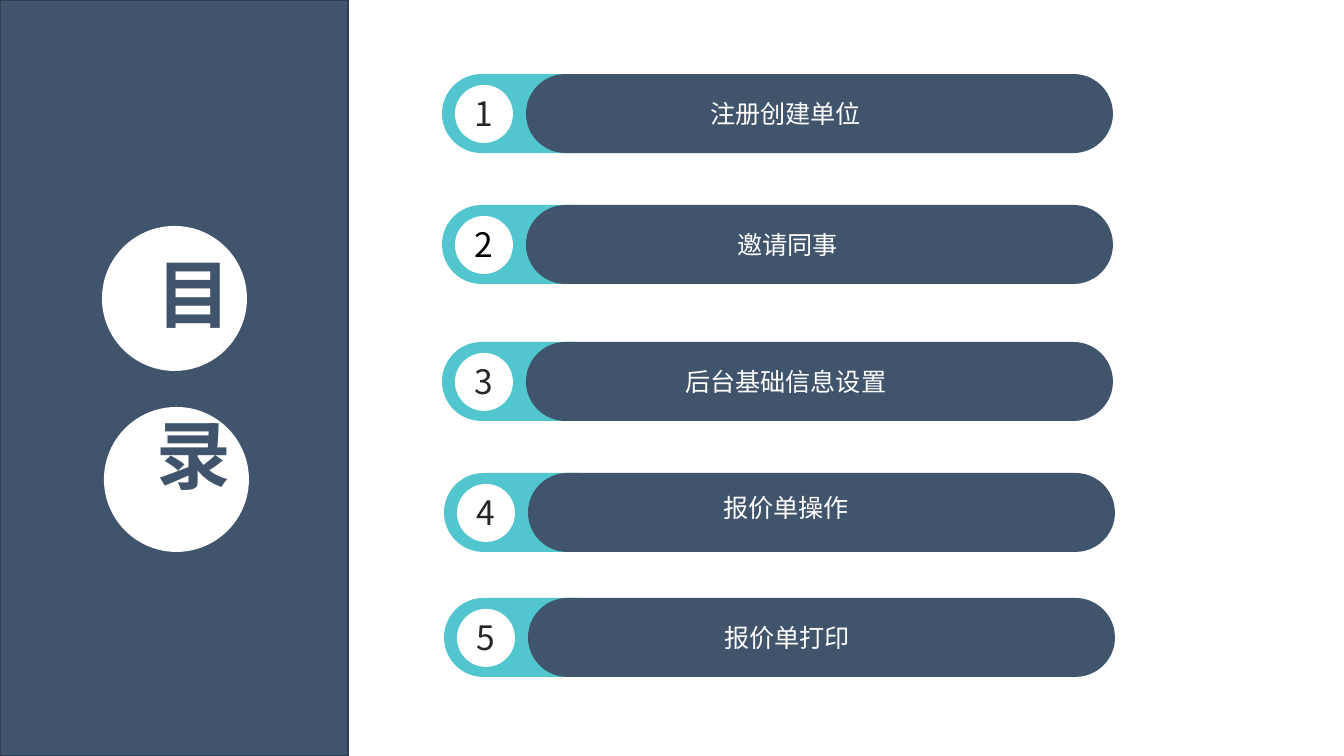
import pptx
import pptx.dml.color
import pptx.enum.shapes
import pptx.enum.text
import pptx.util
from lxml import etree

PX = 914400 / 134.4
FONT = "Noto Sans CJK SC"
NAVY, TEAL, WHITE = "40546C", "51C6CF", "FFFFFF"
RECT = pptx.enum.shapes.MSO_SHAPE.RECTANGLE
PILL = pptx.enum.shapes.MSO_SHAPE.ROUNDED_RECTANGLE
OVAL = pptx.enum.shapes.MSO_SHAPE.OVAL


def add_filled(shapes, kind, box, color):
    shape = shapes.add_shape(kind, *[round(v * PX) for v in box])
    shape.shadow.inherit = False
    shape.fill.solid()
    shape.fill.fore_color.rgb = pptx.dml.color.RGBColor.from_string(color)
    shape.line.fill.background()
    if kind == PILL:
        shape.adjustments[0] = 0.5
    return shape


def add_text(shapes, box, text, size, color, bold=False, wrap=True):
    frame = shapes.add_textbox(*[round(v * PX) for v in box]).text_frame
    frame.word_wrap = wrap
    frame.vertical_anchor = pptx.enum.text.MSO_ANCHOR.MIDDLE
    frame.text = text
    for paragraph in frame.paragraphs:
        paragraph.alignment = pptx.enum.text.PP_ALIGN.CENTER
        font = paragraph.runs[0].font
        font.name = FONT
        font.size = pptx.util.Pt(size)
        font.bold = bold
        font.color.rgb = pptx.dml.color.RGBColor.from_string(color)
        east_asian = etree.SubElement(font._element, pptx.oxml.ns.qn("a:ea"))
        east_asian.set("typeface", FONT)
    return frame


deck = pptx.Presentation()
deck.slide_width = round(1344 * PX)
deck.slide_height = round(756 * PX)
slide = deck.slides.add_slide(deck.slide_layouts[6])

# Side panel with the heading
panel = add_filled(slide.shapes, RECT, (0, 0, 348, 756), NAVY)
panel.line.color.rgb = pptx.dml.color.RGBColor.from_string("2F3E50")
panel.line.width = pptx.util.Pt(1)
for left, top in [(102, 226), (104, 407)]:
    add_filled(slide.shapes, OVAL, (left, top, 145, 145), WHITE)
heading = add_text(slide.shapes, (135, 239, 118, 268), "目\n录", 40, NAVY, bold=True)
heading.margin_top = heading.margin_bottom = 0
heading.paragraphs[1].space_before = pptx.util.Pt(38)

# Agenda entries: left, top, label left, label offset from top, number colour, label
entries = [
    (442, 74, 551, 17, "262626", "注册创建单位"),
    (442, 205, 553, 17, "000000", "邀请同事"),
    (442, 342, 551, 17, "262626", "后台基础信息设置"),
    (444, 473, 551, 12, "262626", "报价单操作"),
    (444, 598, 552, 17, "262626", "报价单打印"),
]
for number, (left, top, label_left, label_drop, number_color, label) in enumerate(entries, 1):
    entry = slide.shapes.add_group_shape().shapes
    add_filled(entry, PILL, (left, top, 175, 79), TEAL)
    add_filled(entry, PILL, (left + 84, top, 587, 79), NAVY)
    add_filled(entry, OVAL, (left + 13, top + 11, 58, 58), WHITE)
    add_text(entry, (left + 18, top + 12, 47, 54), str(number), 18, number_color, wrap=False)
    add_text(entry, (label_left, top + label_drop, 470, 44), label, 13.5, WHITE)

deck.save("out.pptx")
